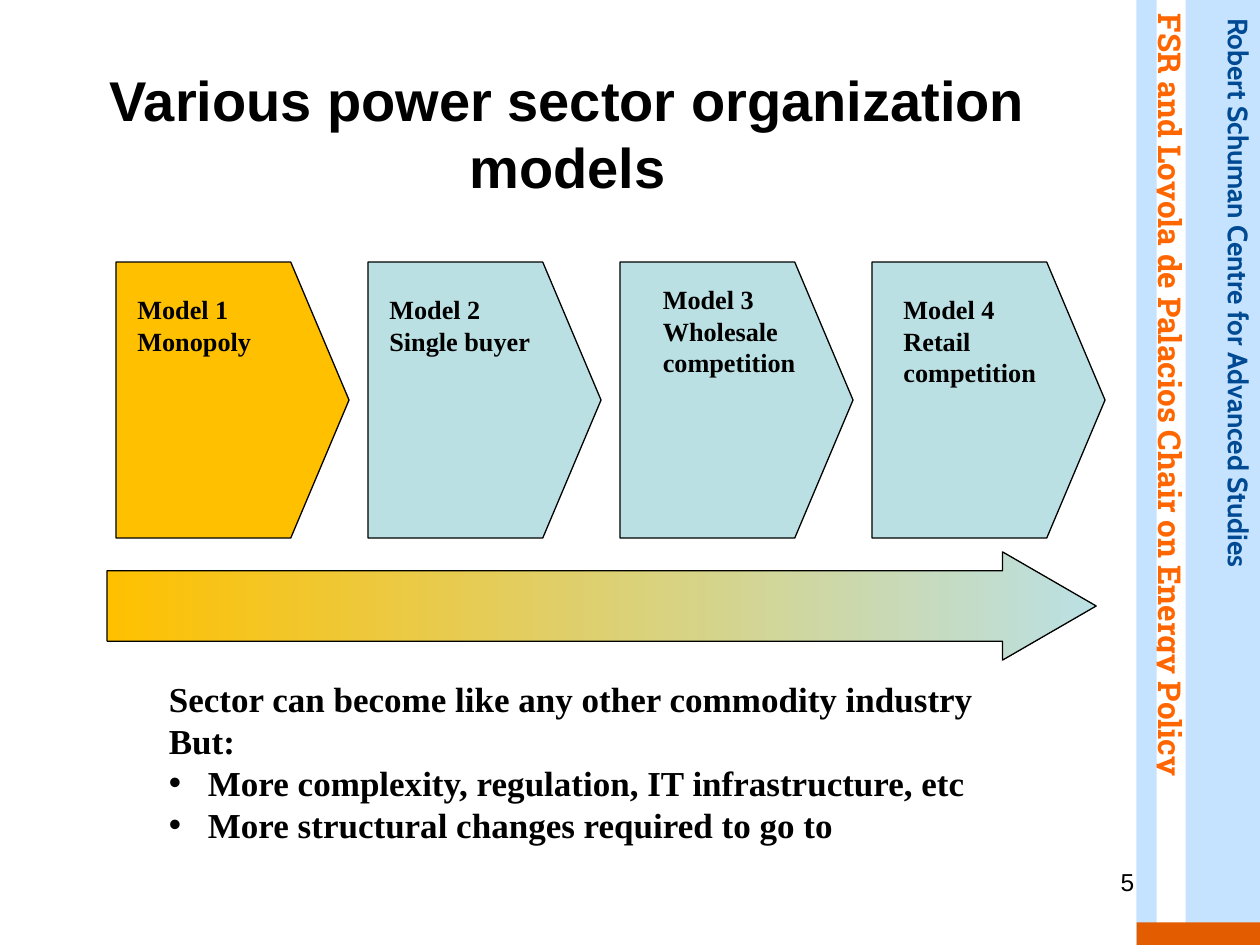
from dataclasses import dataclass

from lxml.etree import SubElement
from pptx import Presentation
from pptx.dml.color import RGBColor
from pptx.enum.shapes import MSO_SHAPE
from pptx.enum.text import MSO_ANCHOR, MSO_AUTO_SIZE, PP_ALIGN
from pptx.oxml.ns import qn
from pptx.util import Inches, Pt


@dataclass(frozen=True)
class Theme:
    black: str = "000000"
    white: str = "FFFFFF"
    amber: str = "FFC000"
    teal: str = "BBE0E3"
    pale_blue: str = "C5E2FF"
    navy: str = "004A94"
    orange: str = "FF6600"
    rust: str = "E45C00"
    sans: str = "Arial"
    serif: str = "Times New Roman"
    chair_font: str = "Roboto Slab"
    centre_font: str = "Cabin"
    title_size: int = 32
    body_size: int = 20
    chair_size: int = 18
    centre_size: int = 16
    label_size: int = 15
    number_size: int = 14


@dataclass(frozen=True)
class Box:
    left: float
    top: float
    width: float
    height: float

    def emu(self) -> tuple:
        return tuple(Inches(v) for v in (self.left, self.top, self.width, self.height))


@dataclass(frozen=True)
class Model:
    lines: tuple
    text_left: float
    text_top: float
    fill: str


THEME = Theme()
MODEL_LEFT, MODEL_STEP = 0.92, 2
MODELS = (
    Model(("Model 1", "Monopoly"), 1, 2.33, THEME.amber),
    Model(("Model 2", "Single buyer"), 3, 2.33, THEME.teal),
    Model(("Model 3", "Wholesale", "competition"), 5.17, 2.25, THEME.teal),
    Model(("Model 4", "Retail", "competition"), 7.08, 2.33, THEME.teal),
)
OUTLOOK = (
    "Sector can become like any other commodity industry",
    "But:",
    "More complexity, regulation, IT infrastructure, etc",
    "More structural changes required to go to",
)
FIRST_BULLET = 2


def add_shape(slide, kind, box: Box, fill: str | None = None, line: str | None = None):
    sp = slide.shapes.add_shape(kind, *box.emu())
    sp.shadow.inherit = False
    if fill:
        sp.fill.solid()
        sp.fill.fore_color.rgb = RGBColor.from_string(fill)
    if line:
        sp.line.color.rgb = RGBColor.from_string(line)
        sp.line.width = Pt(0.75)
    else:
        sp.line.fill.background()
    return sp


def set_bullet(p, bulleted: bool) -> None:
    pPr = p._p.get_or_add_pPr()
    indent = Inches(0.31) if bulleted else 0
    pPr.set("marL", str(indent))
    pPr.set("indent", str(-indent))
    if bulleted:
        SubElement(pPr, qn("a:buChar")).set("char", "•")
    else:
        SubElement(pPr, qn("a:buNone"))


def write(sp, lines, *, size: int, font: str, color: str = THEME.black, bold: bool = True,
          align=PP_ALIGN.LEFT, anchor=MSO_ANCHOR.TOP, leading: float | None = None,
          insets: tuple | None = None, first_bullet: int | None = None) -> None:
    """Fill a shape with one paragraph per line; leading is a multiple of the size."""
    tf = sp.text_frame
    tf.word_wrap = True
    tf.auto_size = MSO_AUTO_SIZE.NONE
    tf.vertical_anchor = anchor
    if insets:
        tf.margin_left, tf.margin_top, tf.margin_right, tf.margin_bottom = map(Inches, insets)
    for i, line in enumerate(lines):
        p = tf.add_paragraph() if i else tf.paragraphs[0]
        p.alignment = align
        p.space_before = Pt(0)
        if leading:
            p.line_spacing = Pt(size * leading)
        if first_bullet is not None:
            set_bullet(p, i >= first_bullet)
        r = p.add_run()
        r.text = line
        r.font.size, r.font.name, r.font.bold = Pt(size), font, bold
        r.font.color.rgb = RGBColor.from_string(color)


def add_text(slide, box: Box, lines, **fmt):
    sp = slide.shapes.add_textbox(*box.emu())
    write(sp, lines, **fmt)
    return sp


def place(sp, box: Box) -> None:
    sp.left, sp.top, sp.width, sp.height = box.emu()


def add_side_band(slide) -> None:
    chair = add_shape(slide, MSO_SHAPE.RECTANGLE, Box(5.69, 3.41, 7.2, 0.4), THEME.white)
    chair.rotation = 90
    write(chair, ["FSR and Loyola de Palacios Chair on Energy Policy"],
          size=THEME.chair_size, font=THEME.chair_font, color=THEME.orange)
    add_shape(slide, MSO_SHAPE.RECTANGLE, Box(9.41, 0, 0.59, 7.5), THEME.pale_blue)
    centre = add_text(slide, Box(6.6, 3.09, 6.46, 0.37),
                      ["Robert Schuman Centre for Advanced Studies"],
                      size=THEME.centre_size, font=THEME.centre_font, color=THEME.navy)
    centre.rotation = 90
    add_shape(slide, MSO_SHAPE.RECTANGLE, Box(9.02, 0, 0.16, 7.5), THEME.pale_blue)
    add_shape(slide, MSO_SHAPE.RECTANGLE, Box(9.02, 7.32, 0.98, 0.18), THEME.rust)


def add_models(slide) -> None:
    for i, model in enumerate(MODELS):
        box = Box(MODEL_LEFT + i * MODEL_STEP, 2.08, 1.85, 2.19)
        sp = add_shape(slide, MSO_SHAPE.PENTAGON, box, model.fill, THEME.black)
        sp.adjustments[0] = 0.25
        add_text(slide, Box(model.text_left, model.text_top, 1.35, 0.25 * len(model.lines)),
                 model.lines, size=THEME.label_size, font=THEME.serif, leading=1.2,
                 insets=(0.09, 0, 0, 0))


def add_transition_arrow(slide) -> None:
    sp = add_shape(slide, MSO_SHAPE.RIGHT_ARROW, Box(0.85, 4.38, 7.85, 0.86), line=THEME.black)
    sp.adjustments[0], sp.adjustments[1] = 0.65, 0.865
    sp.fill.gradient()
    sp.fill.gradient_angle = 0
    for stop, pos, color in zip(sp.fill.gradient_stops, (0, 1), (THEME.amber, THEME.teal)):
        stop.position = pos
        stop.color.rgb = RGBColor.from_string(color)


def main() -> None:
    prs = Presentation()
    prs.slide_width, prs.slide_height = Inches(10), Inches(7.5)
    slide = prs.slides.add_slide(prs.slide_layouts[1])
    title, body = slide.shapes.title, slide.placeholders[1]

    add_side_band(slide)
    add_models(slide)
    add_transition_arrow(slide)

    place(title, Box(0.39, 0.39, 8.23, 1.33))
    write(title, ["Various power sector organization models"], size=THEME.title_size,
          font=THEME.sans, align=PP_ALIGN.CENTER, anchor=MSO_ANCHOR.MIDDLE, leading=1.2)
    place(body, Box(1.25, 5.38, 7.11, 1.35))
    write(body, OUTLOOK, size=THEME.body_size, font=THEME.serif, leading=1.2,
          insets=(0.09, 0, 0, 0), first_bullet=FIRST_BULLET)
    add_text(slide, Box(7.17, 6.83, 1.93, 0.52), ["5"], size=THEME.number_size,
             font=THEME.sans, bold=False, align=PP_ALIGN.RIGHT)
    prs.save("out.pptx")


if __name__ == "__main__":
    main()
